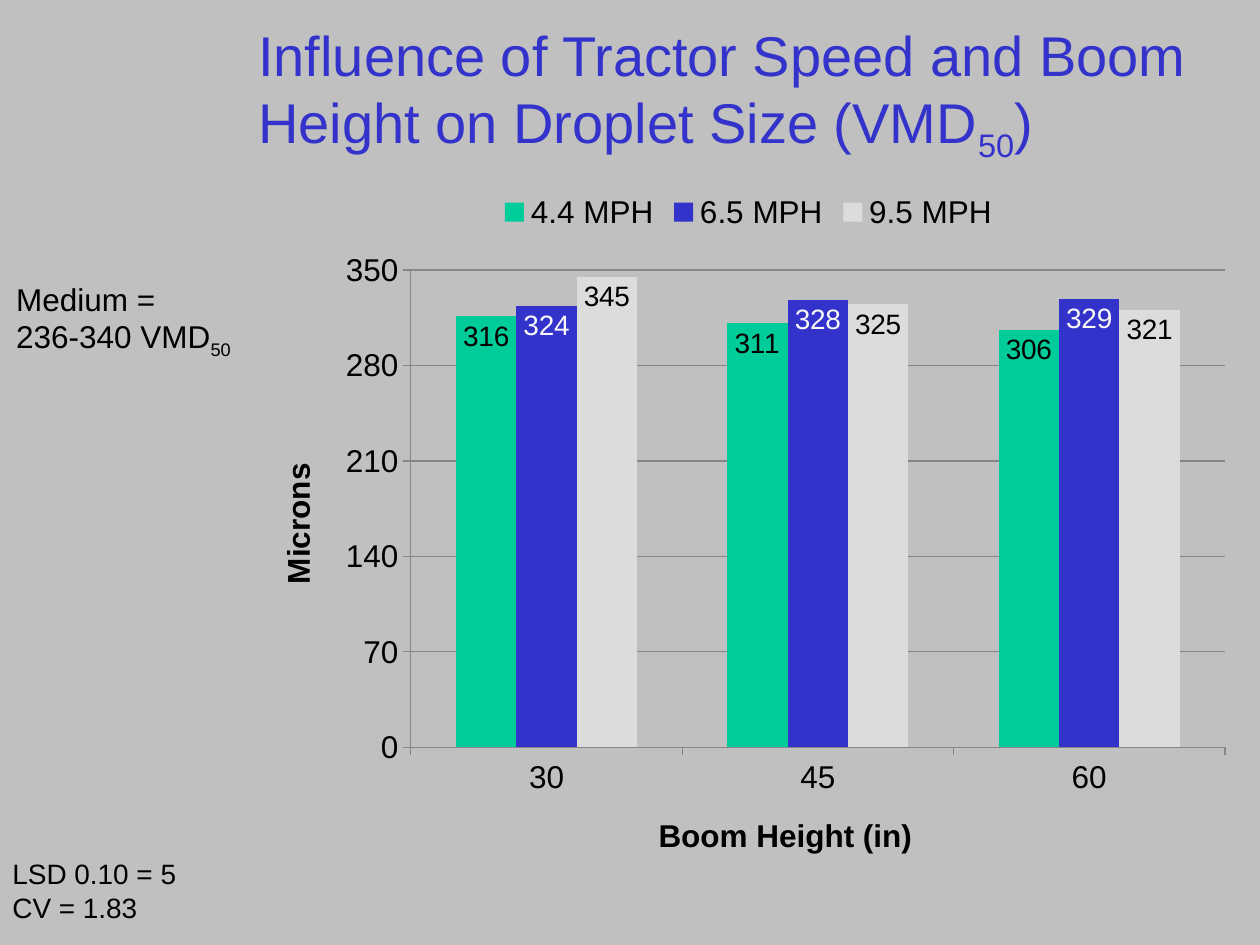
from lxml import etree
from pptx import Presentation
from pptx.chart.data import CategoryChartData
from pptx.dml.color import RGBColor
from pptx.enum.chart import XL_CHART_TYPE, XL_LABEL_POSITION, XL_LEGEND_POSITION, XL_TICK_MARK
from pptx.enum.text import MSO_ANCHOR, MSO_AUTO_SIZE, PP_ALIGN
from pptx.oxml import parse_xml
from pptx.oxml.ns import nsdecls, qn
from pptx.util import Inches, Pt

COLUMN_CLUSTERED = XL_CHART_TYPE.COLUMN_CLUSTERED
INSIDE_END = XL_LABEL_POSITION.INSIDE_END
LEGEND_TOP = XL_LEGEND_POSITION.TOP
TICK_OUTSIDE = XL_TICK_MARK.OUTSIDE
TICK_NONE = XL_TICK_MARK.NONE

FONT = "Arial"
BACKGROUND = RGBColor(0xC0, 0xC0, 0xC0)
BLACK = RGBColor(0x00, 0x00, 0x00)
BLUE = RGBColor(0x33, 0x33, 0xCC)
GREEN = RGBColor(0x00, 0xCC, 0x99)
LIGHT_GRAY = RGBColor(0xDC, 0xDC, 0xDC)
OFF_WHITE = RGBColor(0xF8, 0xF8, 0xF8)
LINE_GRAY = RGBColor(0x86, 0x86, 0x86)


def write_text(text_frame, paragraphs, size, color=BLACK, anchor=MSO_ANCHOR.TOP,
               wrap=False, auto_size=MSO_AUTO_SIZE.SHAPE_TO_FIT_TEXT):
    """Write paragraphs given as lists of runs; every second run is a subscript."""
    text_frame.word_wrap = wrap
    text_frame.auto_size = auto_size
    text_frame.vertical_anchor = anchor
    for index, runs in enumerate(paragraphs):
        paragraph = text_frame.paragraphs[0] if index == 0 else text_frame.add_paragraph()
        paragraph.alignment = PP_ALIGN.LEFT
        for position, text in enumerate(runs):
            run = paragraph.add_run()
            run.text = text
            run.font.name = FONT
            run.font.size = Pt(size)
            run.font.color.rgb = color
            if position % 2:
                run._r.get_or_add_rPr().set("baseline", "-25000")


presentation = Presentation()
presentation.slide_width = Inches(10)
presentation.slide_height = Inches(7.5)
slide = presentation.slides.add_slide(presentation.slide_layouts[5])
slide.background.fill.solid()
slide.background.fill.fore_color.rgb = BACKGROUND

# Title
title = slide.shapes.title
title.left, title.top = Inches(1.95), Inches(0.11)
title.width, title.height = Inches(7.97), Inches(1.25)
write_text(
    title.text_frame,
    [["Influence of Tractor Speed and Boom Height on Droplet Size (VMD", "50", ")"]],
    size=32, color=BLUE, anchor=MSO_ANCHOR.MIDDLE, wrap=True, auto_size=MSO_AUTO_SIZE.NONE)

# Droplet size chart
speeds = [
    ("4.4 MPH", (316, 311, 306), GREEN, BLACK),
    ("6.5 MPH", (324, 328, 329), BLUE, OFF_WHITE),
    ("9.5 MPH", (345, 325, 321), LIGHT_GRAY, BLACK),
]
chart_data = CategoryChartData()
chart_data.categories = ["30", "45", "60"]
for name, values, _, _ in speeds:
    chart_data.add_series(name, values)
chart = slide.shapes.add_chart(
    COLUMN_CLUSTERED, Inches(2), Inches(1.42), Inches(7.88), Inches(5.57), chart_data).chart
chart.has_title = False
chart.font.name = FONT
chart.font.size = Pt(18)
chart.font.color.rgb = BLACK
chart.has_legend = True
chart.legend.position = LEGEND_TOP
chart.legend.include_in_layout = False

plot = chart.plots[0]
plot.gap_width = 150
plot.overlap = 0
plot.vary_by_categories = False
for series, (_, _, fill_color, label_color) in zip(plot.series, speeds):
    series.format.fill.solid()
    series.format.fill.fore_color.rgb = fill_color
    labels = series.data_labels
    labels.show_value = True
    labels.position = INSIDE_END
    labels.font.name = FONT
    labels.font.size = Pt(16)
    labels.font.color.rgb = label_color

category_axis, value_axis = chart.category_axis, chart.value_axis
for axis, text in ((category_axis, "Boom Height (in)"), (value_axis, "Microns")):
    axis.major_tick_mark = TICK_OUTSIDE
    axis.minor_tick_mark = TICK_NONE
    axis.format.line.color.rgb = LINE_GRAY
    axis.axis_title.text_frame.text = text
    font = axis.axis_title.text_frame.paragraphs[0].runs[0].font
    font.name = FONT
    font.size = Pt(18)
    font.bold = True
    font.color.rgb = BLACK
value_axis.minimum_scale = 0
value_axis.maximum_scale = 350
value_axis.major_unit = 70
value_axis.has_major_gridlines = True
value_axis.major_gridlines.format.line.color.rgb = LINE_GRAY

# Plot area as fractions of the chart
plot_area = chart._chartSpace.chart.plotArea
for old_layout in plot_area.findall(qn("c:layout")):
    plot_area.remove(old_layout)
layout = parse_xml(f"<c:layout {nsdecls('c')}><c:manualLayout/></c:layout>")
for tag, value in (("layoutTarget", "inner"), ("xMode", "edge"), ("yMode", "edge"),
                   ("x", "0.16"), ("y", "0.13"), ("w", "0.82"), ("h", "0.68")):
    etree.SubElement(layout[0], qn(f"c:{tag}")).set("val", value)
plot_area.insert(0, layout)

# Side notes
notes = [
    (0, 6.75, 1.52, 0.64, 16, [["LSD 0.10 = 5"], ["CV = 1.83"]]),
    (0.03, 2.17, 2.02, 0.71, 18, [["Medium ="], ["236-340 VMD", "50"]]),
]
for left, top, width, height, size, paragraphs in notes:
    text_box = slide.shapes.add_textbox(Inches(left), Inches(top), Inches(width), Inches(height))
    write_text(text_box.text_frame, paragraphs, size=size)

presentation.save("out.pptx")
